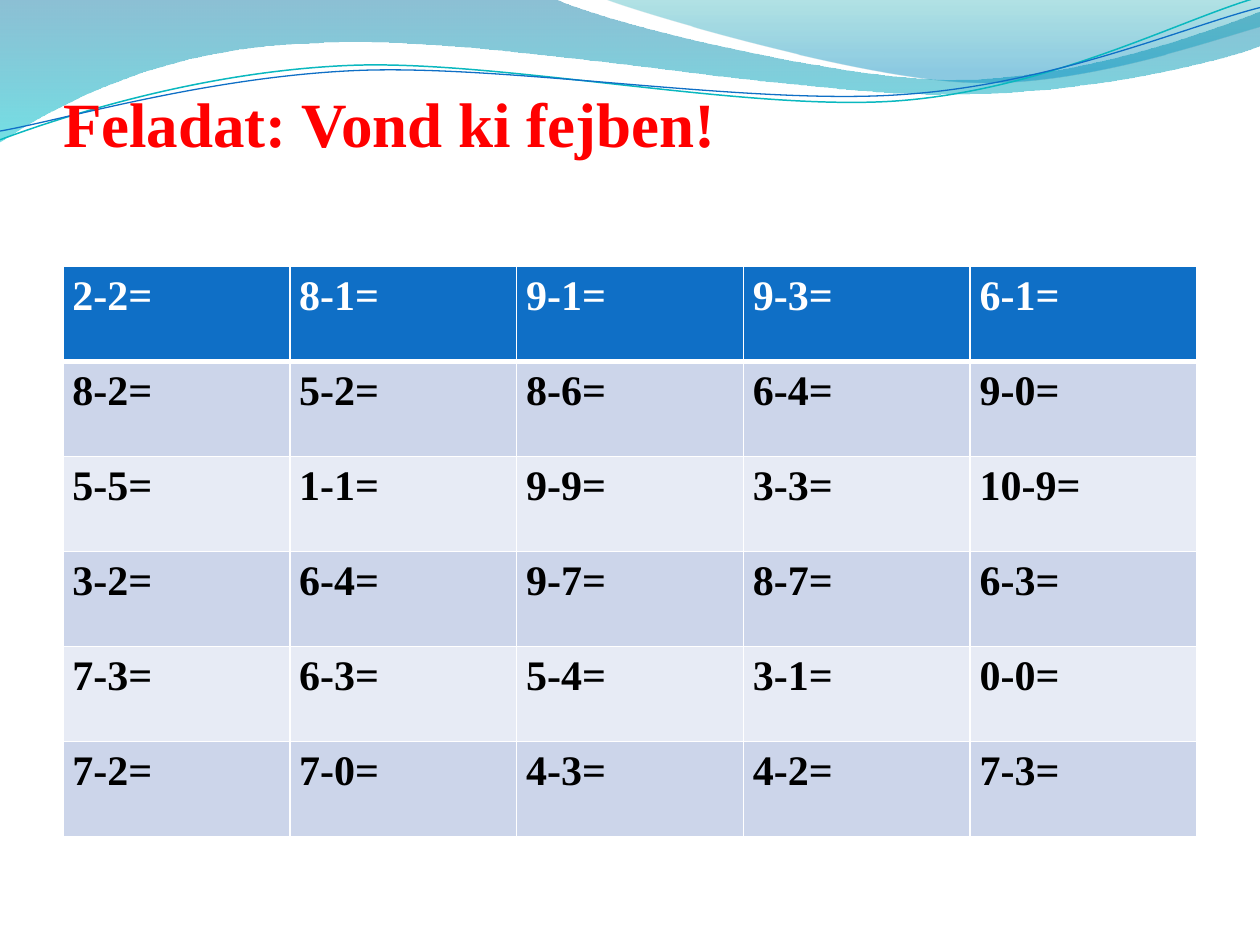
import math

import pptx
import pptx.util
import pptx.dml.color
import pptx.enum.text
import pptx.oxml.ns
import lxml.etree

Pt = pptx.util.Pt

COLORS = {
    "title": "FF0000", "header": "0F6FC6", "header_text": "FFFFFF",
    "text": "000000", "border": "FFFFFF", "odd": "CCD5EA", "even": "E7EBF5",
    "teal_line": "0AB8BF", "blue_line": "0F6FC6",
}
FONT = "Times New Roman"
TILT = 357.3

EXERCISES = [
    "2-2= 8-1= 9-1= 9-3= 6-1=",
    "8-2= 5-2= 8-6= 6-4= 9-0=",
    "5-5= 1-1= 9-9= 3-3= 10-9=",
    "3-2= 6-4= 9-7= 8-7= 6-3=",
    "7-3= 6-3= 5-4= 3-1= 0-0=",
    "7-2= 7-0= 4-3= 4-2= 7-3=",
]

# Outlines in points: a segment of one point is straight, one of three is a Bezier curve
WIDE_WAVE = [
    [(0, 0)], [(316.8, -0.7)],
    [(342.7, 12.2), (478.1, 45.4), (545.8, 45.4)],
    [(614.2, 45.4), (689.8, 18.7), (720, 6.5)],
    [(720.7, 25.9)],
    [(707.8, 31.7), (626.4, 54.7), (537.1, 54)],
    [(447.8, 54), (275, 20.2), (185, 24.5)],
    [(92.9, 25.9), (33.1, 59.8), (-0.7, 81.4)],
    [(0, 0)],
]
RIGHT_WAVE = [
    [(344.9, -0.7)],
    [(366.5, 7.9), (491, 44.6), (553.7, 46.8)],
    [(616.3, 49.7), (691.9, 23), (720, 15.1)],
    [(720, 0)], [(344.9, -0.7)],
]
TEAL_CURVE = [
    [(0, 79.9)],
    [(34.6, 67), (113.8, 41), (199.4, 37.4)],
    [(284.4, 33.8), (427, 64.1), (513.4, 57.6)],
    [(599.8, 51.1), (675.4, 10.8), (718.6, -1.4)],
]
BLUE_CURVE = [
    [(0, 74.9)],
    [(33.8, 69.1), (118.1, 43.9), (203.8, 40.3)],
    [(290.2, 36.7), (429.8, 60.5), (516.2, 54)],
    [(601.9, 48.2), (677.5, 15.1), (720, 4.3)],
]


def rgb(value):
    return pptx.dml.color.RGBColor.from_string(value)


def add_xml(parent, tag, **attributes):
    return lxml.etree.SubElement(parent, pptx.oxml.ns.qn(tag), attributes)


def set_values(target, values):
    for name, value in values.items():
        setattr(target, name, value)


def write_text(frame, text, size, color, line_spacing):
    para = frame.paragraphs[0]
    set_values(para, {"alignment": pptx.enum.text.PP_ALIGN.LEFT, "line_spacing": line_spacing})
    span = para.add_run()
    span.text = text
    set_values(span.font, {"name": FONT, "size": Pt(size), "bold": True})
    span.font.color.rgb = rgb(color)


def to_local(point, frame, rotation):
    """Turn a page point back by the rotation and measure it from the frame's corner."""
    left, top, width, height = frame
    dx, dy = point[0] - left - width / 2, point[1] - top - height / 2
    angle = math.radians(-rotation)
    return (dx * math.cos(angle) - dy * math.sin(angle) + width / 2,
            dx * math.sin(angle) + dy * math.cos(angle) + height / 2)


def add_outline(page, frame, segments, close, rotation=0):
    left, top, width, height = frame
    builder = page.shapes.build_freeform(Pt(left), Pt(top))
    builder.add_line_segments([(Pt(left + width), Pt(top + height))], close=False)
    shape = builder.convert_to_shape()
    shape.shadow.inherit = False
    shape.rotation = rotation

    # Bezier segments take the place of the diagonal
    outline = next(shape.element.iter(pptx.oxml.ns.qn("a:path")))
    for child in list(outline):
        outline.remove(child)
    for index, segment in enumerate(segments):
        tag = "a:moveTo" if index == 0 else "a:lnTo" if len(segment) == 1 else "a:cubicBezTo"
        command = add_xml(outline, tag)
        for point in segment:
            x, y = to_local(point, frame, rotation)
            add_xml(command, "a:pt", x=str(int(Pt(x))), y=str(int(Pt(y))))
    if close:
        add_xml(outline, "a:close")
    return shape


def add_wave(page, frame, segments, stops):
    shape = add_outline(page, frame, segments, True)
    shape.line.fill.background()
    shape.fill.gradient()
    shape.fill.gradient_angle = 270
    for stop, (position, color, opacity) in zip(shape.fill.gradient_stops, stops):
        stop.position = position
        stop.color.rgb = rgb(color)
    colors = shape.element.spPr.iter(pptx.oxml.ns.qn("a:srgbClr"))
    for node, (position, color, opacity) in zip(colors, stops):
        add_xml(node, "a:alpha", val=str(opacity * 1000))


def add_curve(page, frame, segments, color, width):
    shape = add_outline(page, frame, segments, False, TILT)
    shape.fill.background()
    shape.line.color.rgb = rgb(color)
    shape.line.width = Pt(width)


def add_title(page, text):
    title = page.shapes.title
    title.element.getparent().append(title.element)  # in front of the waves
    set_values(title, {"left": Pt(36), "top": Pt(55.4), "width": Pt(648), "height": Pt(90)})
    set_values(title.text_frame, {
        "margin_left": 0, "margin_right": 0, "margin_top": 0, "margin_bottom": 0,
        "vertical_anchor": pptx.enum.text.MSO_ANCHOR.TOP, "word_wrap": True,
        "auto_size": pptx.enum.text.MSO_AUTO_SIZE.NONE,
    })
    write_text(title.text_frame, text, 36, COLORS["title"], 0.83)


def set_borders(cell, widths):
    properties = cell._tc.get_or_add_tcPr()
    for index, (side, width) in enumerate(widths.items()):
        line = lxml.etree.Element(pptx.oxml.ns.qn("a:ln" + side), {"w": str(int(Pt(width)))})
        add_xml(add_xml(line, "a:solidFill"), "a:srgbClr", val=COLORS["border"])
        properties.insert(index, line)


def add_exercise_table(page):
    rows = [line.split() for line in EXERCISES]
    frame = page.shapes.add_table(len(rows), len(rows[0]), Pt(36), Pt(152.3), Pt(648), Pt(325.8))
    table = frame.table
    for column in table.columns:
        column.width = Pt(129.6)
    for row_index, row in enumerate(rows):
        table.rows[row_index].height = Pt(54.3)
        header = row_index == 0
        fill = "header" if header else "odd" if row_index % 2 else "even"
        for column_index, text in enumerate(row):
            cell = table.cell(row_index, column_index)
            set_values(cell, {"margin_left": Pt(5.4), "margin_right": Pt(5.4),
                              "margin_top": 0, "margin_bottom": 0})
            cell.fill.solid()
            cell.fill.fore_color.rgb = rgb(COLORS[fill])
            write_text(cell.text_frame, text, 24,
                       COLORS["header_text" if header else "text"], 1.15)
            set_borders(cell, {"L": 1, "R": 1, "T": 3 if row_index == 1 else 1,
                               "B": 3 if header else 1})


def main():
    deck = pptx.Presentation()
    set_values(deck, {"slide_width": Pt(720), "slide_height": Pt(540)})
    page = deck.slides.add_slide(deck.slide_layouts[5])

    # Wave decoration along the top
    add_wave(page, (-0.7, -0.7, 721.4, 82.1), WIDE_WAVE,
             [(0, "0074A1", 45), (1, "00C6CF", 55)])
    add_wave(page, (344.9, -0.7, 375.1, 50.4), RIGHT_WAVE,
             [(0, "00A1A9", 30), (0.8, "008BBF", 45)])
    add_curve(page, (-1.4, 15.8, 721.4, 51.1), TEAL_CURVE, COLORS["teal_line"], 0.85)
    add_curve(page, (-1.4, 21.6, 722.2, 41.8), BLUE_CURVE, COLORS["blue_line"], 0.75)

    # Title and exercises
    add_title(page, "Feladat: Vond ki fejben!")
    add_exercise_table(page)
    deck.save("out.pptx")


if __name__ == "__main__":
    main()
